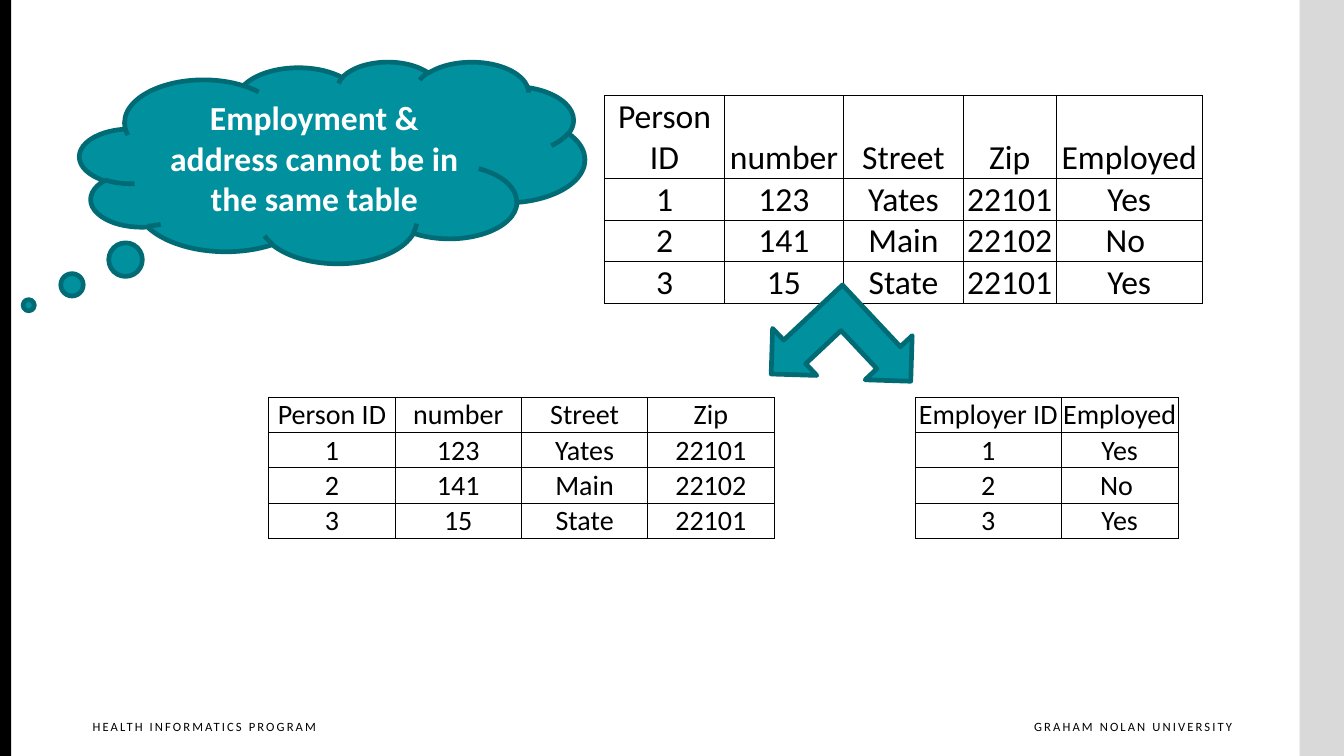
from dataclasses import dataclass

from lxml.etree import SubElement
from pptx import Presentation
from pptx.dml.color import RGBColor
from pptx.enum.shapes import MSO_SHAPE as Preset
from pptx.enum.text import MSO_ANCHOR as Anchor, PP_ALIGN as Align
from pptx.oxml.ns import qn
from pptx.util import Emu, Inches, Pt

COLOURS = {"ink": "000000", "paper": "FFFFFF", "strip": "D9D9D9",
           "teal": "00909E", "outline": "006B75"}
FONT = "Calibri"
SLIDE_WIDTH, SLIDE_HEIGHT = Inches(13.333), Inches(7.5)
CELL_MARGINS = {"margin_left": Inches(0.01), "margin_right": Inches(0.01),
                "margin_top": Inches(0.01), "margin_bottom": 0}

PEOPLE = [
    ["Person ID", "number", "Street", "Zip", "Employed"],
    ["1", "123", "Yates", "22101", "Yes"],
    ["2", "141", "Main", "22102", "No "],
    ["3", "15", "State", "22101", "Yes"],
]
ADDRESSES = [row[:4] for row in PEOPLE]
EMPLOYMENT = [["Employer ID", "Employed"]] + [[row[0], row[4]] for row in PEOPLE[1:]]


@dataclass(frozen=True)
class Box:
    """A frame in percent of the slide's width and height."""
    left: float
    top: float
    width: float
    height: float

    def frame(self) -> tuple[Emu, Emu, Emu, Emu]:
        return across(self.left), down(self.top), across(self.width), down(self.height)


@dataclass(frozen=True)
class Grid:
    left: float
    top: float
    columns: list[float]
    rows: list[float]
    size: int
    values: list[list[str]]


@dataclass(frozen=True)
class Figure:
    preset: Preset
    box: Box
    fill: str
    outline: str = ""
    rotation: float = 0
    adjustments: tuple[float, ...] = ()
    text: str = ""


@dataclass(frozen=True)
class Footer:
    text: str
    box: Box
    align: Align


FIGURES_BEHIND = [
    Figure(Preset.RECTANGLE, Box(96.69, 0, 3.31, 100), "strip"),
    Figure(Preset.RECTANGLE, Box(0, 0, 0.83, 100), "ink"),
]
FOOTERS = [
    Footer("GRAHAM NOLAN UNIVERSITY", Box(74.03, 94.4, 17.63, 4.4), Align.RIGHT),
    Footer("HEALTH INFORMATICS PROGRAM", Box(6.15, 94.4, 19.05, 4.4), Align.LEFT),
]
GRIDS = [
    Grid(45, 12.6, [8.89] * 3 + [6.92, 10.87], [11] + [5.5] * 3, 24, PEOPLE),
    Grid(20, 52.53, [9.4] * 4, [4.67] * 4, 20, ADDRESSES),
    Grid(68.1, 52.53, [10.87, 8.68], [4.67] * 4, 20, EMPLOYMENT),
]
FIGURES_IN_FRONT = [
    Figure(Preset.LEFT_UP_ARROW, Box(57.68, 38.4, 9.9, 17.07), "teal", "outline", 226.8),
    Figure(Preset.CLOUD_CALLOUT, Box(5.93, 8.13, 37.58, 26.67), "teal", "outline",
           adjustments=(-0.601, 0.709),
           text="Employment & address cannot be in the same table"),
]


def across(percent: float) -> Emu:
    return Emu(round(SLIDE_WIDTH * percent / 100))


def down(percent: float) -> Emu:
    return Emu(round(SLIDE_HEIGHT * percent / 100))


def colour(name: str) -> RGBColor:
    return RGBColor.from_string(COLOURS[name])


def apply(target, values: dict) -> None:
    for name, value in values.items():
        setattr(target, name, value)


def write(text_frame, text: str, size: int, ink: str, align: Align, bold: bool = False):
    paragraph = text_frame.paragraphs[0]
    paragraph.alignment = align
    run = paragraph.add_run()
    run.text = text
    apply(run.font, {"name": FONT, "size": Pt(size), "bold": bold})
    run.font.color.rgb = colour(ink)
    return run


def draw_figure(slide, figure: Figure) -> None:
    shape = slide.shapes.add_shape(figure.preset, *figure.box.frame())
    shape.shadow.inherit = False
    shape.rotation = figure.rotation
    shape.fill.solid()
    shape.fill.fore_color.rgb = colour(figure.fill)
    if figure.outline:
        shape.line.color.rgb = colour(figure.outline)
        shape.line.width = Pt(3.35)
    else:
        shape.line.fill.background()
    for index, value in enumerate(figure.adjustments):
        shape.adjustments[index] = value
    if figure.text:
        apply(shape.text_frame, {"word_wrap": True, "vertical_anchor": Anchor.MIDDLE})
        write(shape.text_frame, figure.text, 24, "paper", Align.CENTER, bold=True)


def draw_footer(slide, footer: Footer) -> None:
    text_frame = slide.shapes.add_textbox(*footer.box.frame()).text_frame
    apply(text_frame, {"word_wrap": True, "margin_right": 0})
    run = write(text_frame, footer.text, 9, "ink", footer.align)
    run.font._element.set("spc", "150")


def outline_cell(cell) -> None:
    properties = cell._tc.get_or_add_tcPr()
    for side in ("lnL", "lnR", "lnT", "lnB"):
        line = SubElement(properties, qn(f"a:{side}"), w=str(Pt(0.5)))
        fill = SubElement(line, qn("a:solidFill"))
        SubElement(fill, qn("a:srgbClr"), val=COLOURS["ink"])


def draw_grid(slide, grid: Grid) -> None:
    box = Box(grid.left, grid.top, sum(grid.columns), sum(grid.rows))
    table = slide.shapes.add_table(len(grid.rows), len(grid.columns), *box.frame()).table
    apply(table, {"first_row": False, "horz_banding": False})
    for column, width in zip(table.columns, grid.columns):
        column.width = across(width)
    for row, height, values in zip(table.rows, grid.rows, grid.values):
        row.height = down(height)
        for cell, value in zip(row.cells, values):
            outline_cell(cell)
            cell.fill.background()
            apply(cell, CELL_MARGINS | {"vertical_anchor": Anchor.BOTTOM})
            write(cell.text_frame, value, grid.size, "ink", Align.CENTER)


def main() -> None:
    presentation = Presentation()
    apply(presentation, {"slide_width": SLIDE_WIDTH, "slide_height": SLIDE_HEIGHT})
    slide = presentation.slides.add_slide(presentation.slide_layouts[6])
    for draw, items in ((draw_figure, FIGURES_BEHIND), (draw_footer, FOOTERS),
                        (draw_grid, GRIDS), (draw_figure, FIGURES_IN_FRONT)):
        for item in items:
            draw(slide, item)
    presentation.save("out.pptx")


if __name__ == "__main__":
    main()
